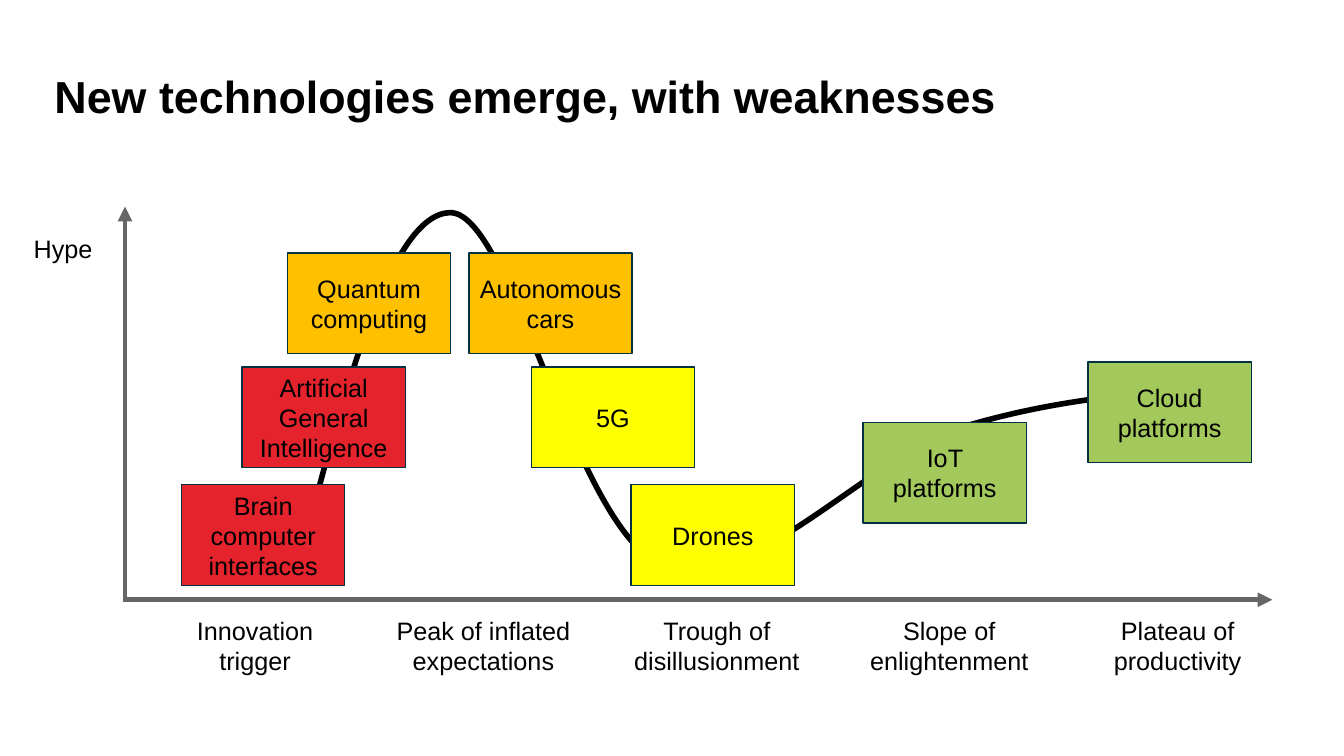
"""Build a slide that places new technologies on the hype curve."""
from dataclasses import dataclass

from lxml.etree import SubElement
from pptx import Presentation
from pptx.dml.color import RGBColor as Color
from pptx.enum.shapes import MSO_CONNECTOR as Link, MSO_SHAPE as Kind
from pptx.enum.text import MSO_ANCHOR as Anchor, MSO_AUTO_SIZE as Fit, PP_ALIGN as Align
from pptx.oxml.ns import qn
from pptx.util import Emu, Pt

TITLE = ("New technologies emerge, with weaknesses", (54, 47, 1193, 103))
HYPE = ("Hype", (10, 227, 105, 40))
TECHS = [
    ("Quantum computing", "peak", 285, 251),
    ("Autonomous cars", "peak", 465, 251),
    ("5G", "trough", 527, 364),
    ("Drones", "trough", 626, 481),
    ("IoT platforms", "mature", 856, 419),
    ("Brain computer interfaces", "early", 180, 481),
    ("Artificial General Intelligence", "early", 240, 364),
    ("Cloud platforms", "mature", 1079, 359),
]
STAGES = [
    ("Innovation trigger", 174),
    ("Peak of inflated expectations", 193),
    ("Trough of disillusionment", 184),
    ("Slope of enlightenment", 191),
    ("Plateau of productivity", 176),
]
START = (293, 574)
BENDS = [
    ((339, 394), (386, 213), (446, 211)),
    ((507, 209), (570, 525), (656, 560)),
    ((741, 595), (859, 453), (957, 423)),
    ((1054, 394), (1147, 388), (1241, 382)),
]
AXES = [((124, 595), (124, 205)), ((122, 595), (1262, 595))]
BOX_W, BOX_H = 162, 100
STAGE_X, STAGE_Y, STAGE_H, STAGE_GAP = 166, 605, 71, 43
PX = 9144


@dataclass(frozen=True)
class Theme:
    """Hold the colours, font and sizes of the slide."""
    font: str = "Arial"
    ink: str = "000000"
    edge: str = "013142"
    axis: str = "666666"
    early: str = "E5232C"
    peak: str = "FFC000"
    trough: str = "FFFF00"
    mature: str = "A3C95C"
    head: int = 32
    body: int = 18
    edge_w: float = 1
    axis_w: float = 3.5
    curve_w: float = 4


LOOK = Theme()


def scale(*sizes):
    """Turn px into EMU."""
    return [Emu(size * PX) for size in sizes]


def stroke(line, tone, width):
    """Set the colour and width of a line."""
    line.color.rgb = Color.from_string(tone)
    line.width = Pt(width)


def write(shape, text, size=LOOK.body, bold=False, align=Align.CENTER):
    """Put one styled run into a shape."""
    frame = shape.text_frame
    frame.word_wrap = True
    para = frame.paragraphs[0]
    para.alignment = align
    run = para.add_run()
    run.text = text
    run.font.name = LOOK.font
    run.font.size = Pt(size)
    run.font.bold = bold
    run.font.color.rgb = Color.from_string(LOOK.ink)
    return frame


def add_curve(shapes):
    """Draw the hype curve with smooth bends."""
    pen = shapes.build_freeform(*START, scale=PX)
    pen.add_line_segments([bend[-1] for bend in BENDS], close=False)
    curve = pen.convert_to_shape()
    curve.shadow.inherit = False
    curve.fill.background()
    stroke(curve.line, LOOK.ink, LOOK.curve_w)
    ends = [START] + [bend[-1] for bend in BENDS]
    left, top = min(x for x, _ in ends), min(y for _, y in ends)
    for part, bend in zip(list(curve.element.iter(qn("a:lnTo"))), BENDS):
        cubic = part.makeelement(qn("a:cubicBezTo"))
        for x, y in bend:
            SubElement(cubic, qn("a:pt"), x=str(x - left), y=str(y - top))
        part.getparent().replace(part, cubic)


def add_title(shapes):
    """Add the heading."""
    text, place = TITLE
    frame = write(shapes.add_textbox(*scale(*place)), text, LOOK.head, True, Align.LEFT)
    frame.vertical_anchor = Anchor.MIDDLE
    frame.margin_left = frame.margin_right = frame.margin_top = frame.margin_bottom = 0
    frame.paragraphs[0].line_spacing = 0.9


def add_tech(shapes, text, phase, x, y):
    """Add one coloured box."""
    box = shapes.add_shape(Kind.RECTANGLE, *scale(x, y, BOX_W, BOX_H))
    box.shadow.inherit = False
    box.fill.solid()
    box.fill.fore_color.rgb = Color.from_string(getattr(LOOK, phase))
    stroke(box.line, LOOK.edge, LOOK.edge_w)
    write(box, text).vertical_anchor = Anchor.MIDDLE


def add_axis(shapes, start, end):
    """Add one axis with an arrowhead."""
    axis = shapes.add_connector(Link.STRAIGHT, *scale(*start, *end))
    stroke(axis.line, LOOK.axis, LOOK.axis_w)
    props = axis.element.spPr
    SubElement(props.find(qn("a:ln")), qn("a:tailEnd"), type="triangle")
    SubElement(props, qn("a:effectLst"))


def add_label(shapes, text, place):
    """Add one plain label."""
    write(shapes.add_textbox(*scale(*place)), text).auto_size = Fit.SHAPE_TO_FIT_TEXT


def main():
    """Build and save the deck."""
    deck = Presentation()
    deck.slide_width, deck.slide_height = scale(1333, 750)
    shapes = deck.slides.add_slide(deck.slide_layouts[6]).shapes
    add_curve(shapes)
    add_title(shapes)
    for tech in TECHS:
        add_tech(shapes, *tech)
    for axis in AXES:
        add_axis(shapes, *axis)
    x = STAGE_X
    for text, width in STAGES:
        add_label(shapes, text, (x, STAGE_Y, width, STAGE_H))
        x += width + STAGE_GAP
    add_label(shapes, *HYPE)
    deck.save("out.pptx")


if __name__ == "__main__":
    main()
